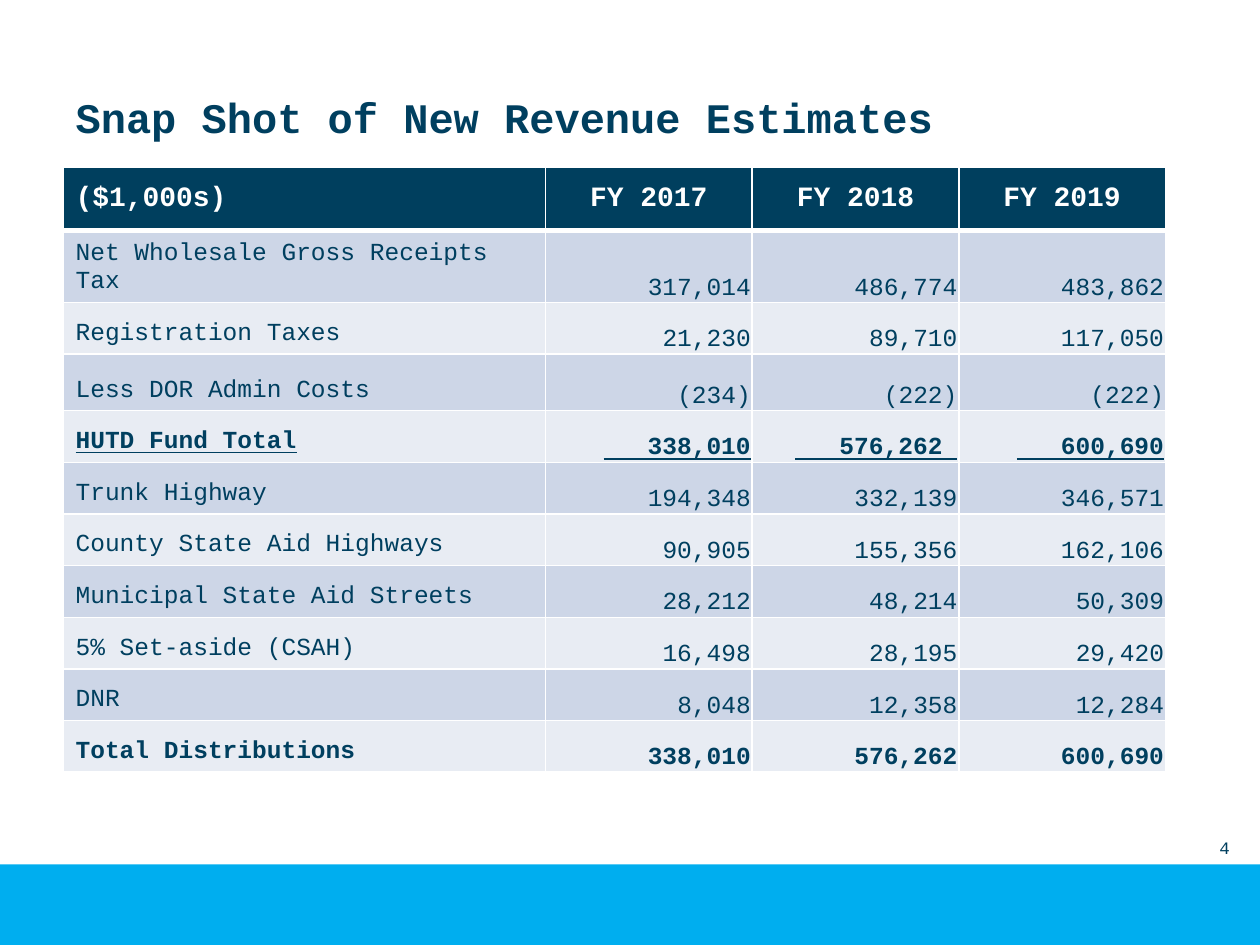
from lxml.etree import SubElement as Sub
from pptx import Presentation
from pptx.dml.color import RGBColor
from pptx.enum.shapes import MSO_SHAPE as Shape
from pptx.enum.text import MSO_ANCHOR as Anchor, PP_ALIGN as Align
from pptx.oxml.ns import qn
from pptx.util import Inches, Pt

NAVY, WHITE = "003F5F", "FFFFFF"


def style(para, size, color=NAVY, bold=False, align=Align.LEFT):
    para.alignment = align
    font = para.font
    font.name, font.size, font.bold = "Courier New", Pt(size), bold
    font.color.rgb = RGBColor.from_string(color)


def border(cell, side, width):
    line = Sub(cell._tc.get_or_add_tcPr(), qn(f"a:ln{side}"), w=str(Pt(width)))
    Sub(Sub(line, qn("a:solidFill")), qn("a:srgbClr"), val=WHITE)


deck = Presentation()
deck.slide_width, deck.slide_height = Inches(10), Inches(7.5)
slide = deck.slides.add_slide(deck.slide_layouts[5])

# Footer band
band = slide.shapes.add_shape(Shape.RECTANGLE, 0, Inches(6.86), Inches(10), Inches(0.64))
band.shadow.inherit = False
band.fill.solid()
band.fill.fore_color.rgb = RGBColor.from_string("00AEEF")
band.line.fill.background()

# Page number
page = slide.shapes.add_textbox(Inches(9.46), Inches(6.46), Inches(0.4), Inches(0.4)).text_frame
page.word_wrap = True
page.vertical_anchor = Anchor.BOTTOM
page.text = "4"
style(page.paragraphs[0], 10, align=Align.RIGHT)

# Title
title = slide.shapes.title
title.left, title.top, title.width, title.height = map(Inches, (0.5, 0.3, 9, 1.25))
title.text_frame.vertical_anchor = Anchor.MIDDLE
title.text_frame.text = "Snap Shot of New Revenue Estimates"
style(title.text_frame.paragraphs[0], 24, bold=True)

# Revenue table; the spaces in the fund total carry its underline
rows = [
    ("($1,000s)", "FY 2017", "FY 2018", "FY 2019"),
    ("Net Wholesale Gross Receipts Tax", "317,014", "486,774", "483,862"),
    ("Registration Taxes", "21,230", "89,710", "117,050"),
    ("Less DOR Admin Costs", "(234)", "(222)", "(222)"),
    ("HUTD Fund Total", "   338,010", "   576,262 ", "   600,690"),
    ("Trunk Highway", "194,348", "332,139", "346,571"),
    ("County State Aid Highways", "90,905", "155,356", "162,106"),
    ("Municipal State Aid Streets", "28,212", "48,214", "50,309"),
    ("5% Set-aside (CSAH)", "16,498", "28,195", "29,420"),
    ("DNR", "8,048", "12,358", "12,284"),
    ("Total Distributions", "338,010", "576,262", "600,690"),
]
widths = [3.83] + [1.64] * 3
heights = [0.5, 0.57, 0.41, 0.45] + [0.41] * 7
table = slide.shapes.add_table(len(rows), len(widths), Inches(0.5), Inches(1.33),
                               Inches(sum(widths)), Inches(sum(heights))).table
for col, width in zip(table.columns, widths):
    col.width = Inches(width)
for row, height in zip(table.rows, heights):
    row.height = Inches(height)

for r, row in enumerate(rows):
    head = r == 0
    fund = row[0] == "HUTD Fund Total"
    bold = head or "Total" in row[0]
    fill = "003F5E" if head else ("E8ECF3", "CDD6E7")[r % 2]
    for c, text in enumerate(row):
        cell = table.cell(r, c)
        cell.text = text
        cell.vertical_anchor = Anchor.MIDDLE if head else Anchor.BOTTOM
        if c and not head:
            cell.margin_left = cell.margin_right = cell.margin_top = Inches(0.01)
            cell.margin_bottom = 0
        align = Align.LEFT if c == 0 else Align.CENTER if head else Align.RIGHT
        para = cell.text_frame.paragraphs[0]
        style(para, 16 if head else 14, WHITE if head else NAVY, bold, align)
        if fund:
            para.font.underline = True
        for side in "LRTB":
            thick = (r, side) in ((0, "B"), (1, "T"))
            border(cell, side, 3 if thick else 1)
        cell.fill.solid()
        cell.fill.fore_color.rgb = RGBColor.from_string(fill)

deck.save("out.pptx")
